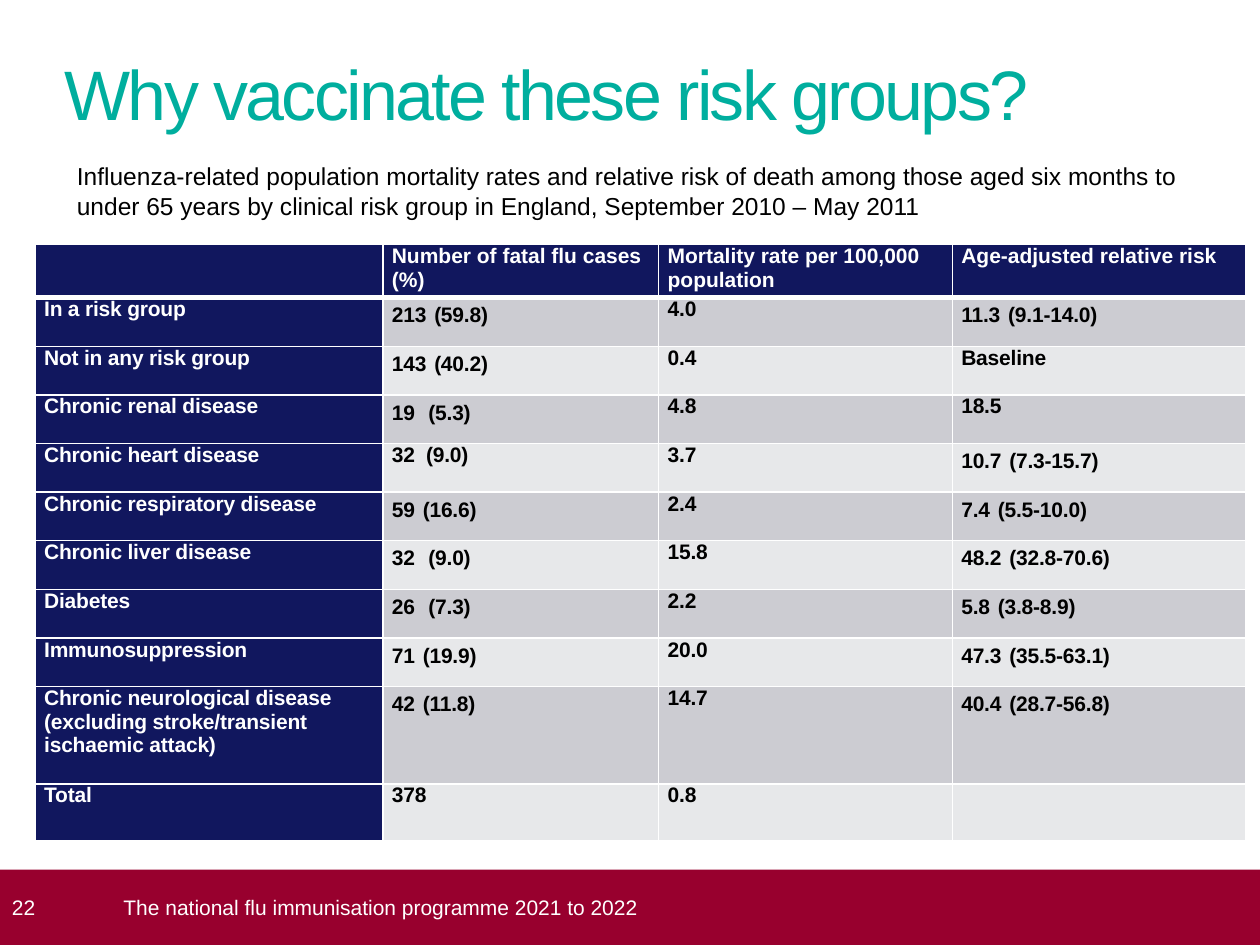
from lxml.etree import SubElement as Sub
from pptx import Presentation
from pptx.dml.color import RGBColor as RGB
from pptx.enum.shapes import MSO_SHAPE as Kind
from pptx.enum.text import MSO_ANCHOR as Anchor, PP_ALIGN as Align
from pptx.oxml.ns import qn
from pptx.util import Cm, Pt

# Content: "|" stands for one wide space inside a cell
TITLE = "Why vaccinate these risk groups?"
INTRO = ("Influenza-related population mortality rates and relative risk of "
         "death among those aged six months to under 65 years by clinical "
         "risk group in England, September 2010 – May 2011")
FOOT = "The national flu immunisation programme 2021 to 2022"
PAGE = "22"
HEAD = ("", "Number of fatal flu cases (%)",
        "Mortality rate per 100,000 population", "Age-adjusted relative risk")
ROWS = [
    ("In a risk group", "213|(59.8)", "4.0", "11.3|(9.1-14.0)"),
    ("Not in any risk group", "143|(40.2)", "0.4", "Baseline"),
    ("Chronic renal disease", "19 |(5.3)", "4.8", "18.5"),
    ("Chronic heart disease", "32  (9.0)", "3.7", "10.7|(7.3-15.7)"),
    ("Chronic respiratory disease", "59|(16.6)", "2.4", "7.4|(5.5-10.0)"),
    ("Chronic liver disease", "32 |(9.0)", "15.8", "48.2|(32.8-70.6)"),
    ("Diabetes", "26 |(7.3)", "2.2", "5.8|(3.8-8.9)"),
    ("Immunosuppression", "71|(19.9)", "20.0", "47.3|(35.5-63.1)"),
    ("Chronic neurological disease (excluding stroke/transient ischaemic "
     "attack)", "42|(11.8)", "14.7", "40.4|(28.7-56.8)"),
    ("Total", "378", "0.8", ""),
]
WIDTHS = (7.01, 5.56, 5.92, 5.92)
HEIGHTS = [1.07] + [0.98] * 8 + [1.96, 1.14]
HUES = {"teal": "00AE9E", "navy": "11175E", "dark": "CCCCD2",
        "light": "E7E8EA", "wine": "98002E", "white": "FFFFFF",
        "black": "000000"}


def hue(name):
    return RGB.from_string(HUES[name])


def add_run(para, text, size, tint, bold=False, gap=0):
    run = para.add_run()
    run.text = text
    font = run.font
    font.name, font.size, font.bold = "Arial", Pt(size), bold
    font.color.rgb = hue(tint)
    if gap:
        run._r.get_or_add_rPr().set("spc", str(round(gap * 100)))


def set_frame(frame, box, anchor):
    """Set insets (left, top, right, bottom, in cm) and the anchor."""
    frame.word_wrap = True
    frame.vertical_anchor = anchor
    (frame.margin_left, frame.margin_top,
     frame.margin_right, frame.margin_bottom) = map(Cm, box)
    para = frame.paragraphs[0]
    para.alignment = Align.LEFT
    return para


def add_edges(cell, base):
    props = cell._tc.get_or_add_tcPr()
    for side, wide in (("L", 1), ("R", 1), ("T", 1), ("B", base)):
        line = Sub(props, qn("a:ln" + side), w=str(Pt(wide)))
        fill = Sub(line, qn("a:solidFill"))
        Sub(fill, qn("a:srgbClr"), val=HUES["white"])


def fill_cell(cell, text, row, col):
    label = row == 0 or col == 0
    add_edges(cell, 3 if row == 0 else 1)
    cell.fill.solid()
    cell.fill.fore_color.rgb = hue(
        "navy" if label else "dark" if row % 2 else "light")
    cell.margin_left = cell.margin_right = Cm(0.18)
    cell.margin_top = cell.margin_bottom = 0
    para = cell.text_frame.paragraphs[0]
    para.space_before = Pt(3)
    if label:
        para.space_after = Pt(3)
    tint = "white" if label else "black"
    for i, part in enumerate(text.split("|")):
        if i:
            add_run(para, " ", 16, tint, True)
        if part:
            add_run(para, part, 12, tint, True, -0.1 if row else 0)


def main():
    deck = Presentation()
    deck.slide_width, deck.slide_height = Cm(25.4), Cm(19.05)
    slide = deck.slides.add_slide(deck.slide_layouts[5])
    shapes = slide.shapes

    # Title
    title = shapes.title
    title.left, title.top, title.width, title.height = map(
        Cm, (1.3, 0.91, 20.29, 1.8))
    para = set_frame(title.text_frame, (0, 0, 0, 0), Anchor.BOTTOM)
    add_run(para, TITLE, 40, "teal", gap=-1.5)

    # Table
    rows = [HEAD] + ROWS
    table = shapes.add_table(
        len(rows), len(HEAD), Cm(0.71), Cm(4.93),
        Cm(sum(WIDTHS)), Cm(sum(HEIGHTS))).table
    for col, wide in zip(table.columns, WIDTHS):
        col.width = Cm(wide)
    for r, (texts, high) in enumerate(zip(rows, HEIGHTS)):
        table.rows[r].height = Cm(high)
        for c, text in enumerate(texts):
            fill_cell(table.cell(r, c), text, r, c)

    # Footer band with page number
    band = shapes.add_shape(
        Kind.RECTANGLE, 0, Cm(17.53), deck.slide_width, Cm(1.52))
    band.shadow.inherit = False
    band.fill.solid()
    band.fill.fore_color.rgb = hue("wine")
    band.line.fill.background()
    para = set_frame(band.text_frame, (0.24, 0, 0.25, 0), Anchor.MIDDLE)
    add_run(para, PAGE, 12, "white")

    # Introduction and footer text
    for spot, inset, anchor, text, size, tint in (
            ((1.3, 3.12, 23.8, 1.45), (0.25, 0.13, 0.25, 0.13),
             Anchor.TOP, INTRO, 14, "black"),
            ((2.49, 17.53, 22.4, 1.52), (0, 0, 0, 0),
             Anchor.MIDDLE, FOOT, 12, "white")):
        box = shapes.add_textbox(*map(Cm, spot))
        para = set_frame(box.text_frame, inset, anchor)
        add_run(para, text, size, tint)

    deck.save("out.pptx")


if __name__ == "__main__":
    main()
